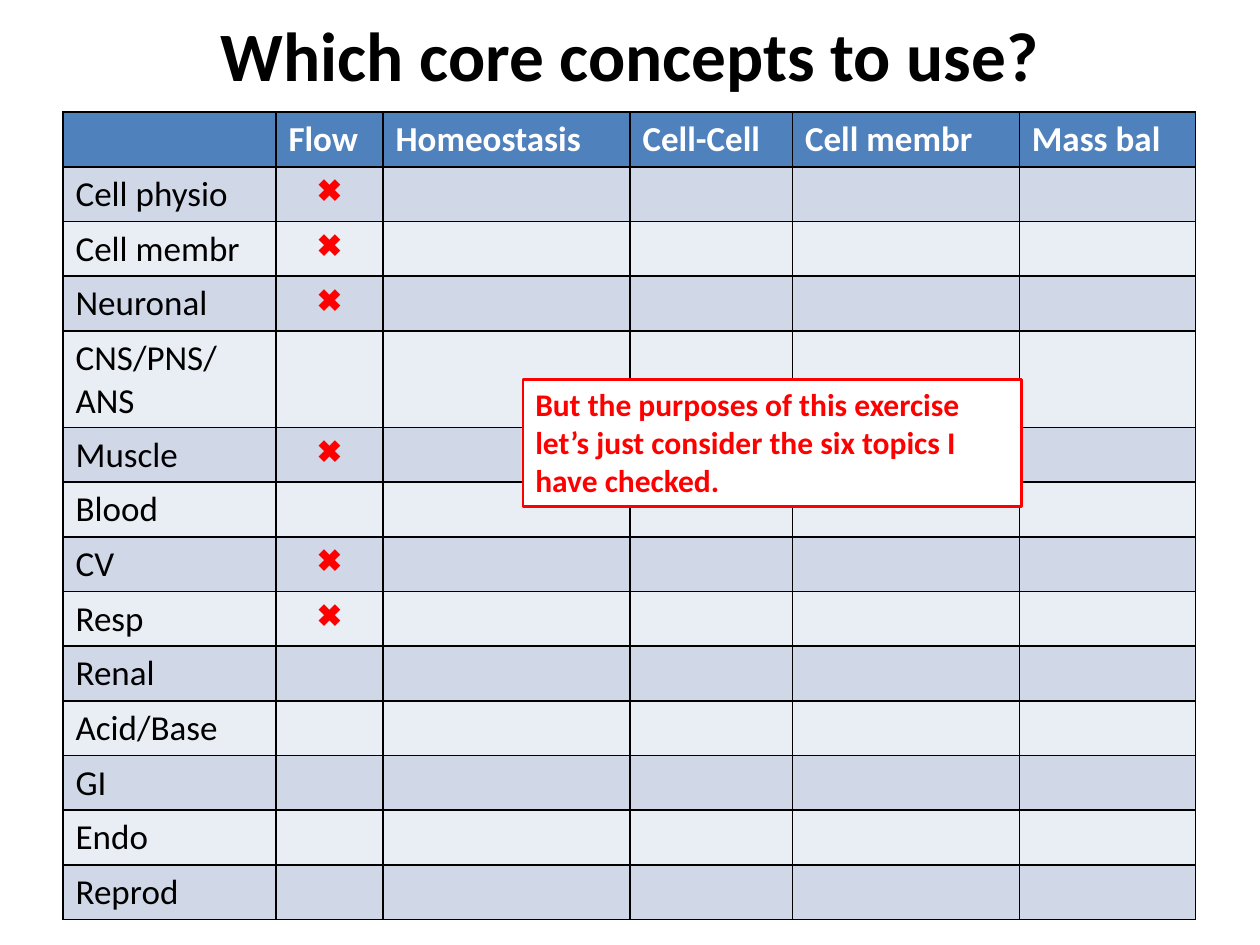
from lxml.etree import SubElement
from pptx import Presentation
from pptx.dml.color import RGBColor
from pptx.enum.shapes import MSO_SHAPE as Shape
from pptx.enum.text import MSO_ANCHOR as Anchor, PP_ALIGN as Align
from pptx.oxml.ns import qn
from pptx.util import Inches, Pt

BLACK, WHITE, RED = "000000", "FFFFFF", "FF0000"
HEADER_FILL = "4F81BD"
BAND_FILLS = ("D0D8E8", "E9EDF4")

CONCEPTS = ["", "Flow", "Homeostasis", "Cell-Cell", "Cell membr", "Mass bal"]
TOPICS = ["Cell physio", "Cell membr", "Neuronal", "CNS/PNS/ANS", "Muscle",
          "Blood", "CV", "Resp", "Renal", "Acid/Base", "GI", "Endo", "Reprod"]
CHECKED_TOPICS = {"Cell physio", "Cell membr", "Neuronal", "Muscle", "CV", "Resp"}
COLUMN_WIDTHS = [1.69, 0.85, 1.96, 1.29, 1.8, 1.4]
ROW_HEIGHT = 0.41

TITLE_FONT = {"name": "Calibri", "size": Pt(39.6), "bold": True}
HEADER_FONT = {"name": "Calibri", "size": Pt(20), "bold": True}
TOPIC_FONT = {"name": "Calibri", "size": Pt(20), "bold": False}
CHECK_FONT = {"name": "Arial", "size": Pt(18), "bold": False}
NOTE_FONT = {"name": "Calibri", "size": Pt(18), "bold": True}


def set_color(color_format, hex_color):
    color_format.rgb = RGBColor.from_string(hex_color)


def set_fill(fill, hex_color):
    fill.solid()
    set_color(fill.fore_color, hex_color)


def write_text(text_frame, text, font_format, hex_color, alignment=Align.LEFT):
    paragraph = text_frame.paragraphs[0]
    paragraph.alignment = alignment
    run = paragraph.add_run()
    run.text = text
    for attribute, value in font_format.items():
        setattr(run.font, attribute, value)
    set_color(run.font.color, hex_color)


def add_borders(cell, hex_color, width):
    """Draw all four sides; must precede the cell's fill in the XML."""
    properties = cell._tc.get_or_add_tcPr()
    for side in ("lnL", "lnR", "lnT", "lnB"):
        line = SubElement(properties, qn(f"a:{side}"), w=str(Pt(width)))
        solid_fill = SubElement(line, qn("a:solidFill"))
        SubElement(solid_fill, qn("a:srgbClr"), val=hex_color)


def add_title(slide, text):
    title = slide.shapes.add_textbox(Inches(0.5), Inches(0.08), Inches(9), Inches(0.69))
    title.text_frame.word_wrap = True
    title.text_frame.vertical_anchor = Anchor.MIDDLE
    write_text(title.text_frame, text, TITLE_FONT, BLACK, Align.CENTER)


def add_concept_table(slide):
    row_count = len(TOPICS) + 1
    table = slide.shapes.add_table(
        row_count, len(CONCEPTS), Inches(0.5), Inches(0.89),
        Inches(sum(COLUMN_WIDTHS)), Inches(ROW_HEIGHT * row_count)).table
    for column, width in zip(table.columns, COLUMN_WIDTHS):
        column.width = Inches(width)
    for row_index, row in enumerate(table.rows):
        row.height = Inches(ROW_HEIGHT)
        fill = BAND_FILLS[(row_index - 1) % 2] if row_index else HEADER_FILL
        for cell in row.cells:
            add_borders(cell, BLACK, 1)
            set_fill(cell.fill, fill)
    for column_index, concept in enumerate(CONCEPTS):
        if concept:
            write_text(table.cell(0, column_index).text_frame, concept, HEADER_FONT, WHITE)
    for row_index, topic in enumerate(TOPICS, start=1):
        write_text(table.cell(row_index, 0).text_frame, topic, TOPIC_FONT, BLACK)
        if topic in CHECKED_TOPICS:
            write_text(table.cell(row_index, 1).text_frame, "✖", CHECK_FONT, RED, Align.CENTER)


def add_note(slide, text):
    note = slide.shapes.add_shape(
        Shape.RECTANGLE, Inches(4.15), Inches(3.01), Inches(3.96), Inches(1.01))
    note.shadow.inherit = False
    set_fill(note.fill, WHITE)
    set_color(note.line.color, RED)
    note.line.width = Pt(1.5)
    note.text_frame.word_wrap = True
    note.text_frame.vertical_anchor = Anchor.TOP
    write_text(note.text_frame, text, NOTE_FONT, RED)


def main():
    presentation = Presentation()
    presentation.slide_width, presentation.slide_height = Inches(10), Inches(7.5)
    slide = presentation.slides.add_slide(presentation.slide_layouts[6])
    add_title(slide, "Which core concepts to use?")
    add_concept_table(slide)
    add_note(slide, "But the purposes of this exercise let’s just consider "
                    "the six topics I have checked.")
    presentation.save("out.pptx")


if __name__ == "__main__":
    main()
